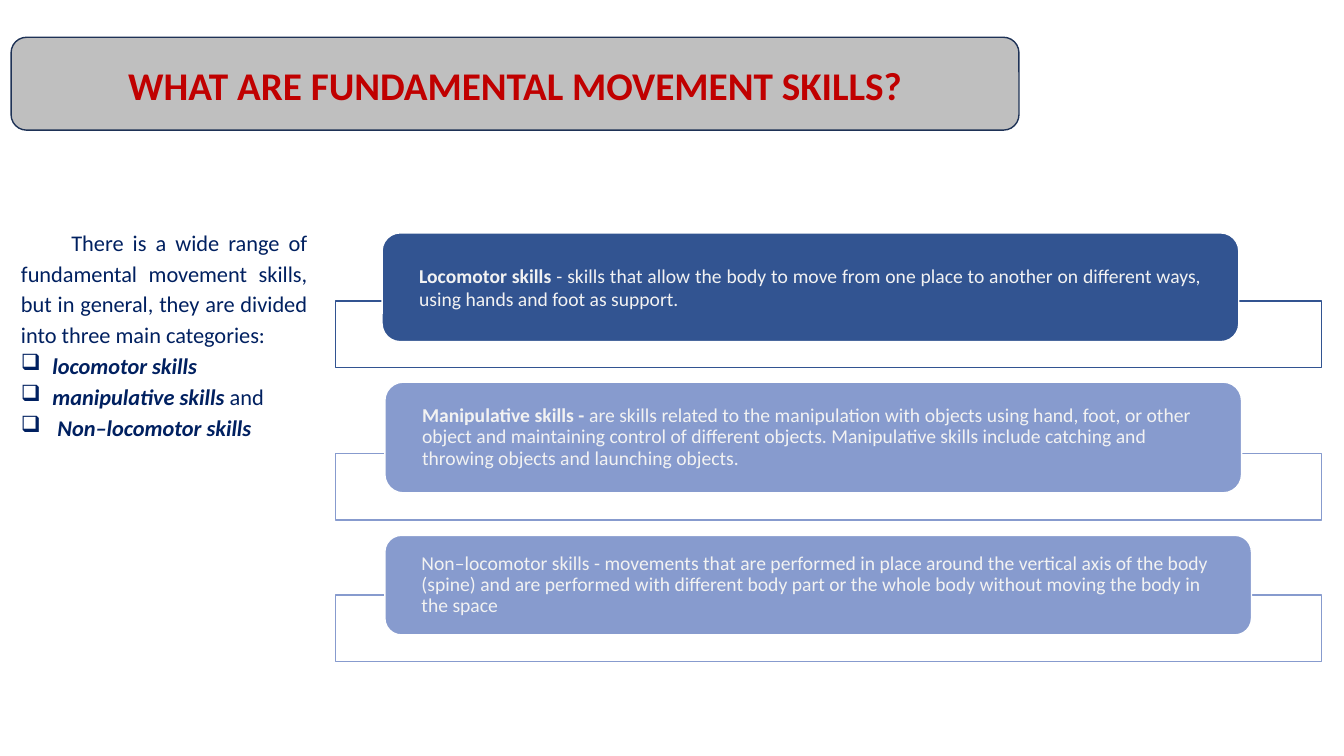
from dataclasses import dataclass

from lxml.etree import SubElement as Sub
from pptx import Presentation
from pptx.dml.color import RGBColor as Rgb
from pptx.enum.shapes import MSO_SHAPE as Form
from pptx.enum.text import MSO_ANCHOR as Anchor, MSO_AUTO_SIZE as Fit, PP_ALIGN as Align
from pptx.oxml.ns import qn
from pptx.util import Cm, Pt


@dataclass(frozen=True)
class Theme:
    font: str = "Calibri"
    head: int = 28
    body: int = 16
    note: int = 14
    red: str = "C00000"
    navy: str = "002060"
    gray: str = "BFBFBF"
    edge: str = "1E3256"
    deep: str = "325491"
    soft: str = "879BCE"
    pale: str = "F2F2F2"
    white: str = "FFFFFF"


class Board:
    def __init__(self, deck, theme):
        self.theme = theme
        self.slide = deck.slides.add_slide(deck.slide_layouts[5])

    def run(self, para, text, size, color, bold=False, slant=False):
        run = para.add_run()
        run.text = text
        font = run.font
        font.name, font.size = self.theme.font, Pt(size)
        font.bold, font.italic = bold, slant
        font.color.rgb = Rgb.from_string(color)

    def shape(self, form, box, fill, line):
        item = self.slide.shapes.add_shape(form, *map(Cm, box))
        item.shadow.inherit = False
        item.fill.solid()
        item.fill.fore_color.rgb = Rgb.from_string(fill)
        item.line.color.rgb = Rgb.from_string(line)
        item.line.width = Pt(1)
        return item

    def title(self, text, box):
        item = self.slide.shapes.title
        item.left, item.top, item.width, item.height = map(Cm, box)
        frame = item.text_frame
        frame.auto_size, frame.word_wrap = Fit.NONE, True
        frame.vertical_anchor = Anchor.MIDDLE
        para = frame.paragraphs[0]
        para.alignment = Align.CENTER
        self.run(para, text, self.theme.head, self.theme.red, bold=True)
        # Bring the title in front of its banner
        item.element.getparent().append(item.element)

    def frame(self, box, color):
        item = self.shape(Form.RECTANGLE, box, self.theme.white, color)
        tint = item.element.spPr.find(qn("a:solidFill"))[0]
        Sub(tint, qn("a:alpha"), val="90000")

    def card(self, box, color, runs, align, gap):
        item = self.shape(Form.ROUNDED_RECTANGLE, box, color, self.theme.white)
        frame = item.text_frame
        frame.word_wrap, frame.vertical_anchor = True, Anchor.MIDDLE
        frame.margin_left = frame.margin_right = Cm(0.8)
        frame.margin_top = frame.margin_bottom = 0
        para = frame.paragraphs[0]
        para.alignment, para.line_spacing = align, gap
        for text, bold in runs:
            self.run(para, text, self.theme.note, self.theme.pale, bold)

    def intro(self, lead, items, box):
        frame = self.slide.shapes.add_textbox(*map(Cm, box)).text_frame
        frame.word_wrap = True
        for i, runs in enumerate([[(lead, False)], *items]):
            para = frame.paragraphs[0] if i == 0 else frame.add_paragraph()
            para.alignment, para.line_spacing = Align.JUSTIFY, 1.15
            props = para._p.get_or_add_pPr()
            if i == 0:
                props.set("indent", str(Cm(1.27)))
            else:
                props.set("marL", str(Cm(0.79)))
                props.set("indent", str(-Cm(0.79)))
                Sub(props, qn("a:buChar"), char="❑")
            for text, strong in runs:
                self.run(para, text, self.theme.body, self.theme.navy, strong, strong)


def main():
    deck = Presentation()
    deck.slide_width, deck.slide_height = Cm(33.87), Cm(19.05)
    theme = Theme()
    board = Board(deck, theme)

    # Banner and title
    board.shape(Form.ROUNDED_RECTANGLE, (0.28, 0.94, 25.4, 2.34), theme.gray, theme.edge)
    board.title("WHAT ARE FUNDAMENTAL MOVEMENT SKILLS?", (0.56, 1.4, 24.84, 1.45))

    # Introduction and list
    board.intro(
        "There is a wide range of fundamental movement skills, but in general, "
        "they are divided into three main categories:",
        [
            [("locomotor skills", True)],
            [("manipulative skills", True), (" and", False)],
            [(" Non–locomotor skills", True)],
        ],
        (0.28, 5.54, 7.72, 5.72),
    )

    # Skill cards: frame top, card box, colour, runs, alignment, line spacing
    cards = [
        (7.59, (9.63, 5.87, 21.59, 2.74), theme.deep, [
            ("Locomotor skills ", True),
            ("- skills that allow the body to move from one place to another on "
             "different ways, using hands and foot as support.", False),
        ], Align.JUSTIFY, 1.0),
        (11.43, (9.7, 9.63, 21.59, 2.79), theme.soft, [
            ("Manipulative skills - ", True),
            ("are skills related to the manipulation with objects using hand, foot, "
             "or other object and maintaining control of different objects. "
             "Manipulative skills include catching and throwing objects and "
             "launching objects.", False),
        ], Align.LEFT, 0.9),
        (14.99, (9.7, 13.49, 21.84, 2.51), theme.soft, [
            ("Non–locomotor skills - movements that are performed in place around "
             "the vertical axis of the body (spine) and are performed with different "
             "body part or the whole body without moving the body in the space", False),
        ], Align.LEFT, 0.9),
    ]
    for top, box, color, runs, align, gap in cards:
        board.frame((8.46, top, 24.84, 1.68), color)
        board.card(box, color, runs, align, gap)

    deck.save("out.pptx")


if __name__ == "__main__":
    main()
